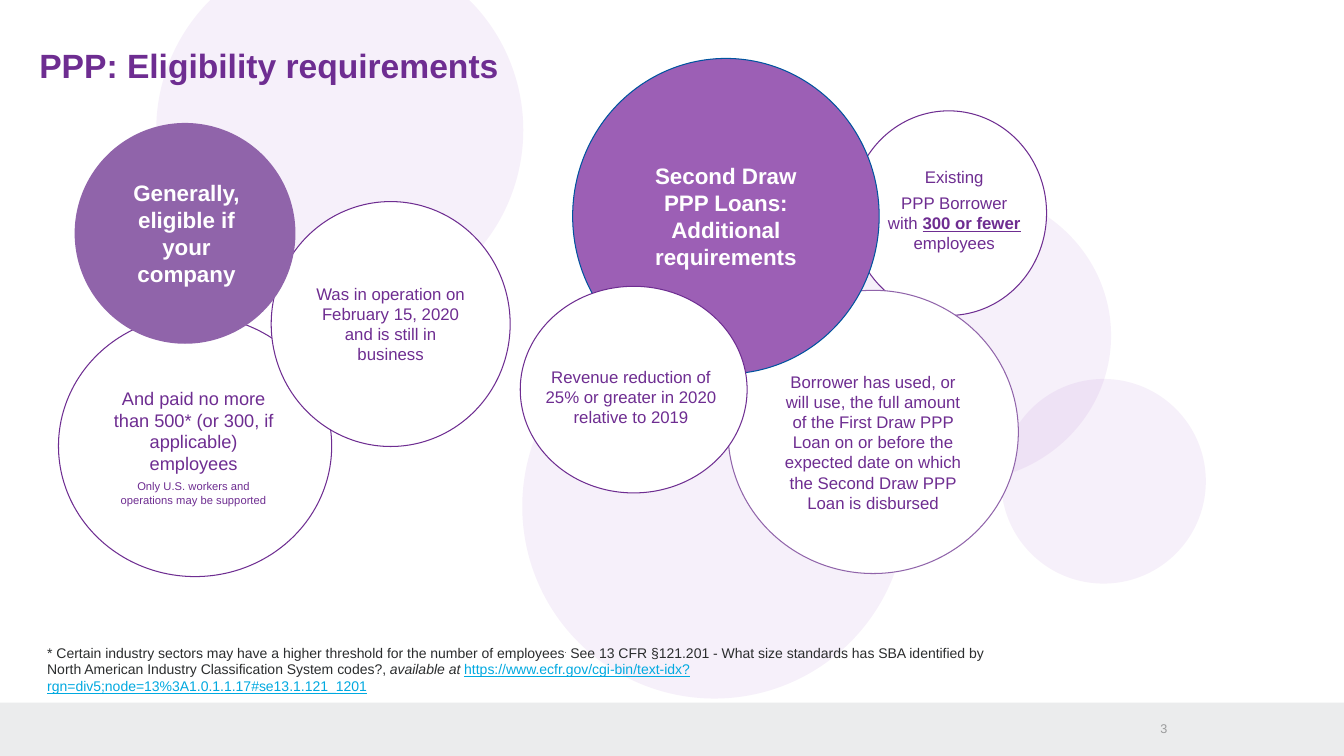
from lxml import etree
from pptx import Presentation
from pptx.dml.color import RGBColor
from pptx.enum.shapes import MSO_SHAPE
from pptx.enum.text import MSO_ANCHOR, MSO_AUTO_SIZE, PP_ALIGN
from pptx.oxml.ns import qn
from pptx.util import Inches, Pt

OVAL, BAR = MSO_SHAPE.OVAL, MSO_SHAPE.RECTANGLE
LEFT, CENTER, RIGHT = PP_ALIGN.LEFT, PP_ALIGN.CENTER, PP_ALIGN.RIGHT
TOP, MIDDLE = MSO_ANCHOR.TOP, MSO_ANCHOR.MIDDLE
NO_FIT = MSO_AUTO_SIZE.NONE
PURPLE, MAUVE, WHITE = "6E2D91", "9064AA", "FFFFFF"
WIDTH, HEIGHT, BAR_TOP = 13.33, 7.5, 6.97

presentation = Presentation()
presentation.slide_width, presentation.slide_height = Inches(WIDTH), Inches(HEIGHT)
slide = presentation.slides.add_slide(presentation.slide_layouts[5])


def add_shape(kind, box, fill, line=None, alpha=None):
    shape = slide.shapes.add_shape(kind, *map(Inches, box))
    shape.shadow.inherit = False
    shape.fill.solid()
    shape.fill.fore_color.rgb = RGBColor.from_string(fill)
    if alpha:
        color = next(shape.element.spPr.iter(qn("a:srgbClr")))
        etree.SubElement(color, qn("a:alpha")).set("val", str(alpha * 1000))
    if line:
        shape.line.color.rgb = RGBColor.from_string(line)
        shape.line.width = Pt(0.75)
    else:
        shape.line.fill.background()
    return shape


def write(shape, paragraphs, size=12, color=PURPLE, bold=False, align=CENTER,
          anchor=TOP, after=0, insets=(0.1, 0.05, 0.1, 0.05)):
    """Each paragraph is a string or a list of (text, format) runs; "\\n" is a line break."""
    frame = shape.text_frame
    frame.word_wrap, frame.auto_size, frame.vertical_anchor = True, NO_FIT, anchor
    (frame.margin_left, frame.margin_top,
     frame.margin_right, frame.margin_bottom) = map(Inches, insets)
    for index, runs in enumerate(paragraphs):
        paragraph = frame.add_paragraph() if index else frame.paragraphs[0]
        paragraph.alignment, paragraph.space_after = align, Pt(after)
        paragraph.space_before = Pt(0)
        for text, style in [(runs, {})] if isinstance(runs, str) else runs:
            if text == "\n":
                paragraph.add_line_break()
                continue
            run = paragraph.add_run()
            run.text = text
            run.font.name = "Arial"
            run.font.size = Pt(style.get("size", size))
            run.font.bold = style.get("bold", bold)
            run.font.italic = style.get("italic", False)
            run.font.underline = style.get("underline", False)
            run.font.color.rgb = RGBColor.from_string(style.get("color", color))
            if "baseline" in style:
                run.font._element.set("baseline", style["baseline"])


# Footer bar and pale background circles
add_shape(BAR, (0, BAR_TOP, WIDTH, HEIGHT - BAR_TOP), "EBECED")
for box in [(1.55, -0.53, 3.64, 3.64), (5.18, 3.12, 3.81, 3.81),
            (8.01, 1.88, 3.01, 2.9), (9.93, 3.76, 2.03, 2.03)]:
    add_shape(OVAL, box, "AE6CD2", alpha=10)

# Title, brought in front of the background circles
title = slide.shapes.title
title.left, title.top, title.width, title.height = map(Inches, (0.39, 0.45, 9.2, 0.32))
write(title, ["PPP: Eligibility requirements"], size=24, bold=True, align=LEFT,
      insets=(0, 0, 0, 0))
title.element.getparent().append(title.element)

# Circles, back to front: box, fill, outline, text box (None: text in the circle),
# paragraphs, text format
circles = [
    ((8.44, 1.1, 1.94, 2.03), WHITE, PURPLE, (8.55, 1.61, 1.83, 0.96),
     ["Existing", [("PPP Borrower", {}), ("\n", {}), ("with ", {}),
                   ("300 or fewer", {"bold": True, "underline": True}),
                   (" employees", {})]],
     {"after": 3.8}),
    ((0.58, 3.13, 2.71, 2.59), WHITE, PURPLE, (1, 3.79, 1.84, 1.3),
     ["And paid no more than 500* (or 300, if applicable) employees",
      [("Only U.S. workers and operations may be supported", {"size": 8})]],
     {"size": 13, "after": 3.8}),
    ((2.69, 2, 2.37, 2.43), WHITE, PURPLE, None,
     ["Was in operation on February 15, 2020 and is still in business"],
     {"after": 3.8, "anchor": MIDDLE, "insets": (0.08, 0.05, 0.08, 0.05)}),
    ((0.74, 1.22, 2.19, 2.19), MAUVE, None, (1.01, 1.73, 1.68, 1.18),
     ["Generally, eligible if your company"],
     {"size": 16, "color": WHITE, "bold": True}),
    ((7.22, 2.88, 2.88, 2.81), WHITE, MAUVE, None,
     ["Borrower has used, or will use, the full amount of the First Draw PPP Loan "
      "on or before the expected date on which the Second Draw PPP Loan is disbursed"],
     {"anchor": MIDDLE, "insets": (0.1, 0.25, 0.1, 0.05)}),
    ((5.68, 0.58, 3.04, 3.13), "9C5FB5", "00549F", None,
     ["Second Draw", "PPP Loans:", "Additional requirements"],
     {"size": 16, "color": WHITE, "bold": True, "anchor": MIDDLE}),
    ((5.16, 2.84, 2.25, 2.05), WHITE, PURPLE, (5.31, 3.59, 1.9, 0.71),
     ["Revenue reduction of 25% or greater in 2020 relative to 2019"],
     {"after": 3.8}),
]
for box, fill, line, text_box, paragraphs, text_format in circles:
    target = add_shape(OVAL, box, fill, line)
    if text_box:
        target = slide.shapes.add_textbox(*map(Inches, text_box))
    write(target, paragraphs, **text_format)

# Footnote
footnote = slide.shapes.add_textbox(*map(Inches, (0.37, 6.34, 9.57, 0.63)))
write(footnote, [[
    ("* Certain industry sectors may have a higher threshold for the number of employees", {}),
    (".", {"baseline": "30000"}),
    (" See 13 CFR §121.201 - What size standards has SBA identified by "
     "North American Industry Classification System codes?, ", {}),
    ("available at ", {"italic": True}),
    ("https://www.ecfr.gov/cgi-bin/text-idx?rgn=div5;node=13%3A1.0.1.1.17#se13.1.121_1201",
     {"color": "00A9E0", "underline": True}),
]], size=10, color="2B2D2E", align=LEFT)

# Page number
page_number = slide.shapes.add_textbox(*map(Inches, (11.42, 7.15, 0.16, 0.16)))
write(page_number, ["3"], size=9, color="9A9B9C", align=RIGHT, anchor=MIDDLE,
      insets=(0, 0, 0, 0))

presentation.save("out.pptx")
